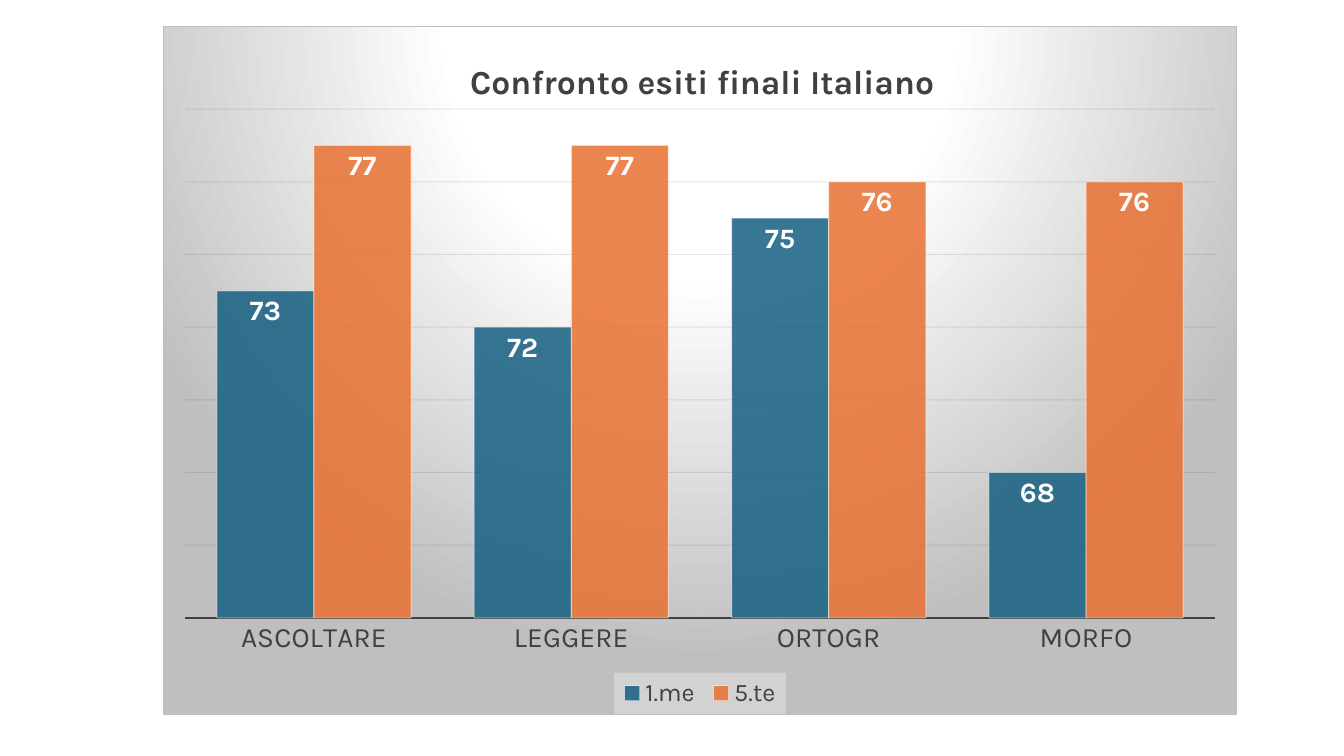
"""Build a slide comparing the final Italian results of first and fifth classes."""
from dataclasses import dataclass

from lxml.etree import SubElement
from pptx import Presentation
from pptx.chart.data import CategoryChartData
from pptx.dml.color import RGBColor
from pptx.enum.chart import XL_CHART_TYPE, XL_LABEL_POSITION, XL_LEGEND_POSITION, XL_TICK_MARK
from pptx.oxml import parse_xml
from pptx.oxml.ns import nsdecls, qn
from pptx.util import Pt


@dataclass(frozen=True)
class Theme:
    """Colours, font and type sizes of the slide."""
    font: str = "Karla"
    ink: str = "404040"
    white: str = "FFFFFF"
    edge: str = "BFBFBF"
    grid: str = "0D0D0D"
    legend_back: str = "F2F2F2"
    classes: tuple = ("156082", "E97132")
    title_size: int = 24
    label_size: int = 20
    legend_size: int = 18


CATEGORIES = ("ASCOLTARE", "LEGGERE", "ORTOGR", "MORFO")
RESULTS = {"1.me": (73, 72, 75, 68), "5.te": (77, 77, 76, 76)}


class ResultsSlide:
    """Holds the theme and the slide being filled."""

    def __init__(self, presentation, theme):
        """Add a blank slide."""
        self.theme = theme
        self.slide = presentation.slides.add_slide(presentation.slide_layouts[6])

    def style_font(self, font, size, color, bold=False):
        """Apply the theme font with the given size and colour."""
        for name, value in {"name": self.theme.font, "size": Pt(size), "bold": bold}.items():
            setattr(font, name, value)
        font.color.rgb = RGBColor.from_string(color)

    def style_line(self, line, color, width):
        """Give a line its colour and width."""
        line.color.rgb = RGBColor.from_string(color)
        line.width = Pt(width)

    def fade(self, parent, fill_route, percent):
        """Set the opacity of the solid fill found under a chart element."""
        route = "/".join(qn(tag) for tag in fill_route.split("/"))
        color = parent.find(f"{route}/{qn('a:solidFill')}/{qn('a:srgbClr')}")
        SubElement(color, qn("a:alpha"), val=str(percent * 1000))

    def place(self, part, index, inner=False, **bounds):
        """Fix the position of a chart part as fractions of the chart."""
        for old in part.findall(qn("c:layout")):
            part.remove(old)
        layout = parse_xml(f"<c:layout {nsdecls('c')}><c:manualLayout/></c:layout>")
        manual = layout[0]
        if inner:
            SubElement(manual, qn("c:layoutTarget"), val="inner")
        for mode in ("xMode", "yMode"):
            SubElement(manual, qn(f"c:{mode}"), val="edge")
        for side, fraction in bounds.items():
            SubElement(manual, qn(f"c:{side}"), val=str(fraction))
        part.insert(index, layout)

    def add_background(self, chart):
        """Fill the chart with a round gradient and a thin border."""
        stops = "".join(
            f'<a:gs pos="{position * 1000}"><a:srgbClr val="{color}"/></a:gs>'
            for position, color in ((0, self.theme.white), (39, self.theme.white),
                                    (100, self.theme.edge)))
        chart.element.find(qn("c:chart")).addnext(parse_xml(
            f'<c:spPr {nsdecls("c", "a")}><a:gradFill><a:gsLst>{stops}</a:gsLst>'
            '<a:path path="circle"><a:fillToRect l="50000" t="-80000" r="50000" b="180000"/>'
            f'</a:path></a:gradFill><a:ln w="{Pt(0.75)}"><a:solidFill>'
            f'<a:srgbClr val="{self.theme.edge}"/></a:solidFill></a:ln></c:spPr>'))

    def add_title(self, chart, text):
        """Write the chart heading."""
        frame = chart.chart_title.text_frame
        frame.text = text
        self.style_font(frame.paragraphs[0].runs[0].font, self.theme.title_size,
                        self.theme.ink, True)
        self.place(chart.element.find(f".//{qn('c:title')}"), 1, x=0.28, y=0.04)

    def format_axes(self, chart):
        """Show the category line and the faint grid of a hidden value axis."""
        subjects, scores = chart.category_axis, chart.value_axis
        subjects.major_tick_mark = subjects.minor_tick_mark = XL_TICK_MARK.NONE
        self.style_font(subjects.tick_labels.font, self.theme.label_size, self.theme.ink)
        self.style_line(subjects.format.line, self.theme.ink, 1.5)
        scale = {"minimum_scale": 64, "maximum_scale": 78, "major_unit": 2,
                 "has_major_gridlines": True, "visible": False}
        for name, value in scale.items():
            setattr(scores, name, value)
        self.style_line(scores.major_gridlines.format.line, self.theme.grid, 0.75)
        self.fade(chart.element.find(f".//{qn('c:majorGridlines')}"), "c:spPr/a:ln", 10)

    def format_bars(self, chart):
        """Colour the bars and write their values inside the ends."""
        plot = chart.plots[0]
        for name, value in {"gap_width": 65, "overlap": 0, "vary_by_categories": False}.items():
            setattr(plot, name, value)
        bar_groups = chart.element.findall(f".//{qn('c:ser')}")
        for series, group, color in zip(plot.series, bar_groups, self.theme.classes):
            series.format.fill.solid()
            series.format.fill.fore_color.rgb = RGBColor.from_string(color)
            self.style_line(series.format.line, self.theme.white, 0.75)
            self.fade(group, "c:spPr", 85)
            self.fade(group, "c:spPr/a:ln", 50)
            labels = series.data_labels
            settings = {"show_value": True, "position": XL_LABEL_POSITION.INSIDE_END,
                        "number_format": "0", "number_format_is_linked": False}
            for name, value in settings.items():
                setattr(labels, name, value)
            self.style_font(labels.font, self.theme.label_size, self.theme.white, True)

    def add_legend(self, chart):
        """Put the legend on a translucent panel at the bottom."""
        chart.has_legend = True
        chart.legend.position = XL_LEGEND_POSITION.BOTTOM
        chart.legend.include_in_layout = False
        self.style_font(chart.legend.font, self.theme.legend_size, self.theme.ink)
        legend = chart.element.find(f".//{qn('c:legend')}")
        self.place(legend, 1, x=0.42, y=0.94, w=0.16, h=0.06)
        legend.find(qn("c:overlay")).addnext(parse_xml(
            f'<c:spPr {nsdecls("c", "a")}><a:solidFill>'
            f'<a:srgbClr val="{self.theme.legend_back}"/></a:solidFill></c:spPr>'))
        self.fade(legend, "c:spPr", 39)

    def add_results_chart(self, title, categories, results, bounds):
        """Add the clustered columns with all their parts."""
        data = CategoryChartData(number_format="0")
        data.categories = categories
        for name, values in results.items():
            data.add_series(name, values)
        chart = self.slide.shapes.add_chart(
            XL_CHART_TYPE.COLUMN_CLUSTERED, *map(Pt, bounds), data).chart
        self.add_background(chart)
        self.add_title(chart, title)
        self.format_axes(chart)
        self.format_bars(chart)
        self.add_legend(chart)
        self.place(chart.element.find(f".//{qn('c:plotArea')}"), 0, inner=True,
                   x=0.02, y=0.12, w=0.96, h=0.74)


def main():
    """Build and save the presentation."""
    presentation = Presentation()
    presentation.slide_width, presentation.slide_height = Pt(960), Pt(540)
    ResultsSlide(presentation, Theme()).add_results_chart(
        "Confronto esiti finali Italiano", CATEGORIES, RESULTS, (116.64, 18.72, 766.8, 491.76))
    presentation.save("out.pptx")


if __name__ == "__main__":
    main()
